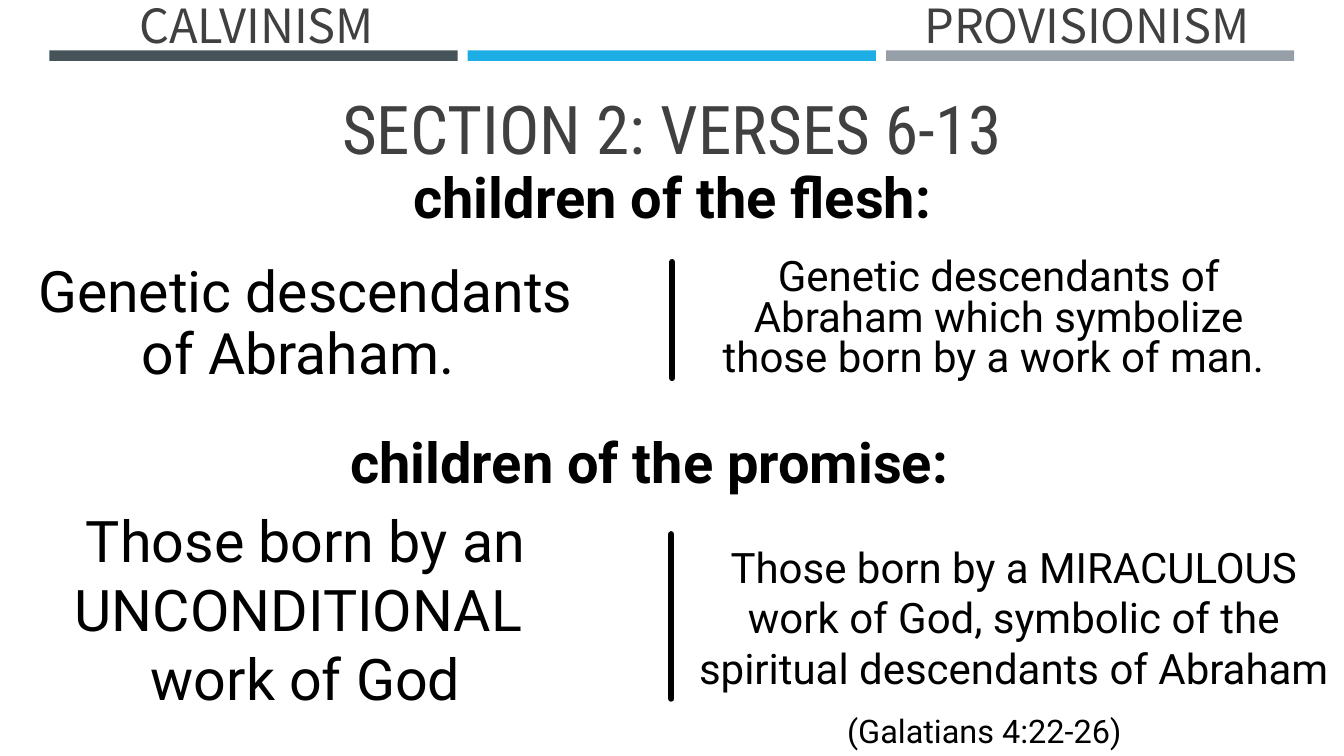
import pptx
import pptx.util
import pptx.dml.color
import pptx.enum.text
import pptx.enum.shapes
import pptx.oxml.ns
import lxml.etree

Pt = pptx.util.Pt
RGB = pptx.dml.color.RGBColor
Align = pptx.enum.text.PP_ALIGN
Anchor = pptx.enum.text.MSO_ANCHOR

SLATE = RGB(0x46, 0x53, 0x59)
BLUE = RGB(0x1C, 0xAD, 0xE4)
GRAY = RGB(0x96, 0x9F, 0xA7)
DARK = RGB(0x40, 0x40, 0x40)
BLACK = RGB(0, 0, 0)

BARS = [SLATE, BLUE, GRAY]
BAR_X, BAR_Y, BAR_W, BAR_H, BAR_STEP = 35.3, 36, 291.6, 7.5, 298.8

TITLE = dict(font="Roboto Condensed", size=48, color=DARK, anchor=Anchor.BOTTOM)
SIDE = dict(font="Noto Sans CJK KR", size=33.6, color=DARK, anchor=Anchor.BOTTOM, space=0.8)
HEAD = dict(size=40, bold=True)

TEXTS = [
    ("SECTION 2: VERSES 6-13", (46, 57.6, 868.3, 66.2), TITLE),
    ("CALVINISM", (13, 0, 340.6, 41), SIDE),
    ("PROVISIONISM", (606.2, 0, 340.6, 41), SIDE),
    ("children of the flesh:", (46, 61.9, 868.3, 156.2), HEAD),
    ("Genetic descendants of Abraham. ", (13, 169.2, 410.4, 126),
     dict(size=40.8, space=0.9)),
    ("Genetic descendants of Abraham which symbolize those born by a work of man. ",
     (508.3, 165.6, 410.4, 126), dict(size=30, space=0.8)),
    ("children of the promise:", (29.5, 251.3, 868.3, 156.2), HEAD),
    ("Those born by an UNCONDITIONAL \nwork of God",
     (-43.2, 345.6, 523.4, 178.6), dict(size=41)),
    ("Those born by a MIRACULOUS\nwork of God, symbolic of the spiritual descendants of Abraham",
     (478.1, 351.4, 492.5, 178.6), dict(size=30)),
    ("(Galatians 4:22-26)", (589.7, 509, 226.8, 31), dict(size=23.2, space=0.8)),
]

RULES = [(480.2, 187.2, 270), (479.5, 381.6, 499)]


def add_bar(slide, x, color):
    bar = slide.shapes.add_shape(
        pptx.enum.shapes.MSO_SHAPE.RECTANGLE, Pt(x), Pt(BAR_Y), Pt(BAR_W), Pt(BAR_H))
    bar.shadow.inherit = False
    bar.fill.solid()
    bar.fill.fore_color.rgb = color
    bar.line.fill.background()


def add_text(slide, text, place, size, font="Roboto", color=BLACK,
             bold=False, anchor=Anchor.MIDDLE, space=None):
    frame = slide.shapes.add_textbox(*map(Pt, place)).text_frame
    frame.word_wrap = True
    frame.vertical_anchor = anchor
    frame.text = text
    for para in frame.paragraphs:
        para.alignment = Align.CENTER
        para.line_spacing = space
        for run in para.runs:
            run.font.name = font
            run.font.size = Pt(size)
            run.font.bold = bold
            run.font.color.rgb = color


def add_rule(slide, x, top, end):
    rule = slide.shapes.add_connector(
        pptx.enum.shapes.MSO_CONNECTOR.STRAIGHT, Pt(x), Pt(top), Pt(x), Pt(end))
    rule.line.color.rgb = BLACK
    rule.line.width = Pt(4.5)
    qn = pptx.oxml.ns.qn
    props = rule.line._get_or_add_ln()
    props.set("cap", "rnd")
    lxml.etree.SubElement(rule._element.spPr, qn("a:effectLst"))


def main():
    deck = pptx.Presentation()
    deck.slide_width, deck.slide_height = Pt(960), Pt(540)
    slide = deck.slides.add_slide(deck.slide_layouts[6])
    for i, color in enumerate(BARS):
        add_bar(slide, BAR_X + i * BAR_STEP, color)
    for text, place, style in TEXTS:
        add_text(slide, text, place, **style)
    for rule in RULES:
        add_rule(slide, *rule)
    deck.save("out.pptx")


if __name__ == "__main__":
    main()
